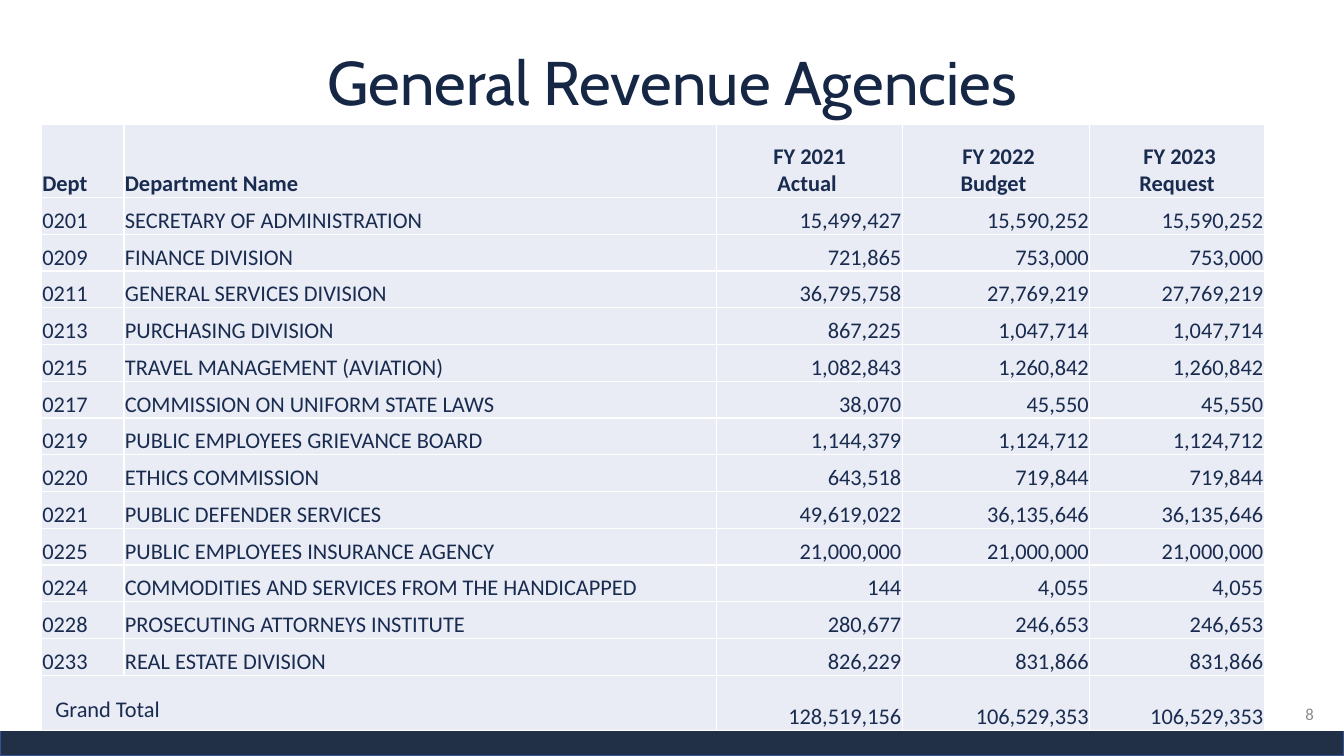
from lxml import etree
from pptx import Presentation
from pptx.dml.color import RGBColor
from pptx.enum.shapes import MSO_SHAPE
from pptx.enum.text import MSO_ANCHOR, PP_ALIGN
from pptx.oxml.ns import qn
from pptx.util import Inches, Pt

RECTANGLE = MSO_SHAPE.RECTANGLE
MIDDLE, BOTTOM = MSO_ANCHOR.MIDDLE, MSO_ANCHOR.BOTTOM
LEFT, CENTER, RIGHT = PP_ALIGN.LEFT, PP_ALIGN.CENTER, PP_ALIGN.RIGHT

WHITE = RGBColor(0xFF, 0xFF, 0xFF)
TITLE_NAVY = RGBColor(0x16, 0x27, 0x46)
TABLE_NAVY = RGBColor(0x19, 0x2C, 0x4F)
BAR_NAVY = RGBColor(0x21, 0x2F, 0x47)
BAR_EDGE = RGBColor(0x32, 0x54, 0x91)
CELL_BLUE = RGBColor(0xE9, 0xEB, 0xF5)
PAGE_GRAY = RGBColor(0x8C, 0x8C, 0x8C)

TITLE_FONT = "Cabin"
BODY_FONT = "Calibri"
TIGHT_MARGINS = (0.01, 0.01, 0.01, 0)
TOTAL_MARGINS = (0.14, 0.07, 0.14, 0.07)

HEADER = ["Dept", "Department Name", " FY 2021 \nActual ", " FY 2022\nBudget ", " FY 2023\nRequest"]
DEPARTMENTS = [
    ("0201", "SECRETARY OF ADMINISTRATION", 15499427, 15590252, 15590252),
    ("0209", "FINANCE DIVISION", 721865, 753000, 753000),
    ("0211", "GENERAL SERVICES DIVISION", 36795758, 27769219, 27769219),
    ("0213", "PURCHASING DIVISION", 867225, 1047714, 1047714),
    ("0215", "TRAVEL MANAGEMENT (AVIATION)", 1082843, 1260842, 1260842),
    ("0217", "COMMISSION ON UNIFORM STATE LAWS", 38070, 45550, 45550),
    ("0219", "PUBLIC EMPLOYEES GRIEVANCE BOARD", 1144379, 1124712, 1124712),
    ("0220", "ETHICS COMMISSION", 643518, 719844, 719844),
    ("0221", "PUBLIC DEFENDER SERVICES", 49619022, 36135646, 36135646),
    ("0225", "PUBLIC EMPLOYEES INSURANCE AGENCY", 21000000, 21000000, 21000000),
    ("0224", "COMMODITIES AND SERVICES FROM THE HANDICAPPED", 144, 4055, 4055),
    ("0228", "PROSECUTING ATTORNEYS INSTITUTE", 280677, 246653, 246653),
    ("0233", "REAL ESTATE DIVISION", 826229, 831866, 831866),
]
TOTALS = ("Grand Total", "", 128519156, 106529353, 106529353)

COLUMN_WIDTHS = [0.82, 5.88, 1.84, 1.86, 1.73]
TABLE_HEIGHT, HEADER_HEIGHT, TOTAL_HEIGHT = 6.02, 0.73, 0.55


class SlideBuilder:
    def __init__(self, presentation):
        self.slide = presentation.slides.add_slide(presentation.slide_layouts[6])

    def fill_text(self, frame, text, size, color, font=BODY_FONT, align=LEFT, bold=False, spacing=None):
        frame.text = text
        for paragraph in frame.paragraphs:
            paragraph.alignment = align
            paragraph.line_spacing = spacing
            paragraph.font.name = font
            paragraph.font.size = Pt(size)
            paragraph.font.bold = bold
            paragraph.font.color.rgb = color

    def text_box(self, box, text, size, color, **style):
        frame = self.slide.shapes.add_textbox(*map(Inches, box)).text_frame
        frame.word_wrap = True
        frame.vertical_anchor = MIDDLE
        self.fill_text(frame, text, size, color, **style)

    def bar(self, box, color, edge=None):
        shape = self.slide.shapes.add_shape(RECTANGLE, *map(Inches, box))
        shape.shadow.inherit = False
        shape.fill.solid()
        shape.fill.fore_color.rgb = color
        if edge is None:
            shape.line.fill.background()
        else:
            shape.line.color.rgb = edge
            shape.line.width = Pt(1)

    def cell(self, cell, text, align, bold=False, margins=TIGHT_MARGINS):
        sides = map(Inches, margins)
        cell.margin_left, cell.margin_top, cell.margin_right, cell.margin_bottom = sides
        cell.vertical_anchor = BOTTOM
        self.fill_text(cell.text_frame, text, 16, TABLE_NAVY, align=align, bold=bold)
        properties = cell._tc.get_or_add_tcPr()
        for tag in ("a:lnL", "a:lnR", "a:lnT", "a:lnB"):
            line = etree.SubElement(properties, qn(tag), w=str(Pt(1)))
            fill = etree.SubElement(line, qn("a:solidFill"))
            etree.SubElement(fill, qn("a:srgbClr"), val=str(WHITE))
        cell.fill.solid()
        cell.fill.fore_color.rgb = CELL_BLUE

    def table(self, left, top, header, records, totals):
        rows = [header, *records, totals]
        last = len(rows) - 1
        record_height = (TABLE_HEIGHT - HEADER_HEIGHT - TOTAL_HEIGHT) / len(records)
        heights = [HEADER_HEIGHT] + [record_height] * len(records) + [TOTAL_HEIGHT]
        box = (left, top, sum(COLUMN_WIDTHS), TABLE_HEIGHT)
        table = self.slide.shapes.add_table(len(rows), len(header), *map(Inches, box)).table
        for column, width in zip(table.columns, COLUMN_WIDTHS):
            column.width = Inches(width)
        for row_index, (values, height) in enumerate(zip(rows, heights)):
            table.rows[row_index].height = Inches(height)
            is_header = row_index == 0
            for column_index, value in enumerate(values):
                is_amount = column_index >= 2
                text = f"{value:,}" if isinstance(value, int) else value
                align = (CENTER if is_header else RIGHT) if is_amount else LEFT
                margins = TOTAL_MARGINS if row_index == last and not is_amount else TIGHT_MARGINS
                self.cell(table.cell(row_index, column_index), text, align, is_header, margins)
        table.cell(last, 0).merge(table.cell(last, 1))


def main():
    presentation = Presentation()
    presentation.slide_width = Inches(13.33)
    presentation.slide_height = Inches(7.5)
    builder = SlideBuilder(presentation)
    builder.text_box((0.92, 0.12, 11.5, 1.45), "General Revenue Agencies", 44, TITLE_NAVY,
                     font=TITLE_FONT, align=CENTER, spacing=0.9)
    builder.bar((0, 7.25, 13.33, 0.25), BAR_NAVY, BAR_EDGE)
    builder.bar((0, 7.2, 13.33, 0.05), WHITE)
    builder.table(0.41, 1.23, HEADER, DEPARTMENTS, TOTALS)
    builder.text_box((9.42, 6.88, 3.71, 0.4), "8", 12, PAGE_GRAY, align=RIGHT)
    presentation.save("out.pptx")


if __name__ == "__main__":
    main()
